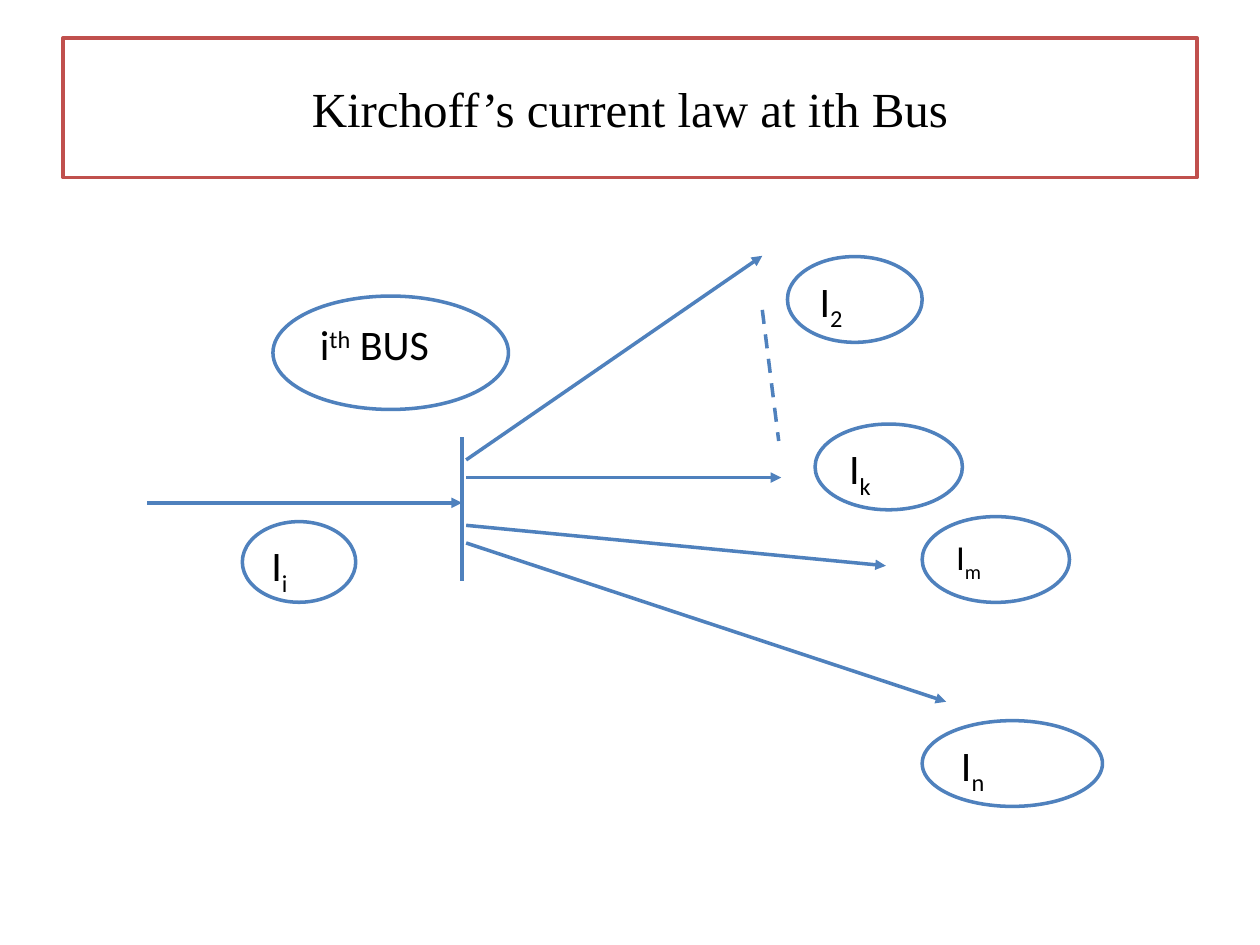
from pptx import Presentation
from pptx.dml.color import RGBColor as RGB
from pptx.enum.dml import MSO_LINE_DASH_STYLE as DASH
from pptx.enum.shapes import MSO_CONNECTOR as CONNECTOR, MSO_SHAPE as SHAPE
from pptx.enum.text import MSO_ANCHOR as ANCHOR, PP_ALIGN as ALIGN
from pptx.oxml.ns import qn
from pptx.util import Pt
from lxml.etree import SubElement

# Content
TITLE = "Kirchoff’s current law at ith Bus"
BUS_X, BRANCH_X = 264, 266.4
ARROW, DASHED = "arrow", "dashed"
LINES = [  # x1, y1, x2, y2, style
    (BUS_X, 249.8, BUS_X, 331.9, None),
    (84.2, 287.3, BUS_X, 287.3, ARROW),
    (BRANCH_X, 310.3, 540.7, 401, ARROW),
    (BRANCH_X, 262.8, 435.6, 146.2, ARROW),
    (BRANCH_X, 272.9, 446.4, 272.9, ARROW),
    (435.6, 177.1, 445, 252, DASHED),
    (BRANCH_X, 300.2, 506.2, 323.3, ARROW),
]
SUB, SUP = -25, 30
LABELS = [  # left, top, width, height, size key, (text, baseline) runs
    (527, 295.2, 84.2, 49, "small", [("I", 0), ("m", SUB)]),
    (138.5, 298.1, 64.8, 46.1, "label", [("I", 0), ("i", SUB)]),
    (156, 169.2, 134.6, 64.8, "label", [("i", 0), ("th", SUP), (" BUS", 0)]),
    (527, 411.8, 103, 49, "label", [("I", 0), ("n", SUB)]),
    (450, 146.6, 77, 49, "label", [("I", 0), ("2", SUB)]),
    (465.8, 242.3, 84.2, 49, "label", [("I", 0), ("k", SUB)]),
]
THEME = {
    "paper": RGB(255, 255, 255), "ink": RGB(0, 0, 0),
    "frame": RGB(0xC0, 0x50, 0x4D), "wire": RGB(0x4F, 0x81, 0xBD),
    "title_font": "Times New Roman", "body_font": "Calibri",
    "title": Pt(28), "label": Pt(24), "small": Pt(20), "stroke": Pt(2),
}


def set_attrs(target, values):
    for name, value in values.items():
        setattr(target, name, value)


def style_line(line, colour):
    line.color.rgb = THEME[colour]
    line.width = THEME["stroke"]


def style_box(s, colour):
    s.fill.solid()
    s.fill.fore_color.rgb = THEME["paper"]
    style_line(s.line, colour)


def add_run(p, text, font, size, baseline=0):
    r = p.add_run()
    r.text = text
    set_attrs(r.font, {"name": THEME[font], "size": THEME[size]})
    r.font.color.rgb = THEME["ink"]
    if baseline:
        r.font._element.set("baseline", str(baseline * 1000))


def add_wire(shapes, x1, y1, x2, y2, style):
    s = shapes.add_connector(CONNECTOR.STRAIGHT, Pt(x1), Pt(y1), Pt(x2), Pt(y2))
    style_line(s.line, "wire")
    if style == DASHED:
        s.line.dash_style = DASH.DASH
    if style == ARROW:
        SubElement(s.line._get_or_add_ln(), qn("a:tailEnd"), type="triangle")
    SubElement(s._element.spPr, qn("a:effectLst"))


def add_label(shapes, left, top, width, height, size, runs):
    s = shapes.add_shape(SHAPE.OVAL, Pt(left), Pt(top), Pt(width), Pt(height))
    s.shadow.inherit = False
    style_box(s, "wire")
    set_attrs(s.text_frame, {"word_wrap": True, "vertical_anchor": ANCHOR.TOP})
    p = s.text_frame.paragraphs[0]
    set_attrs(p, {"alignment": ALIGN.LEFT, "space_after": Pt(10)})
    for text, baseline in runs:
        add_run(p, text, "body_font", size, baseline)


def main():
    prs = Presentation()
    set_attrs(prs, {"slide_width": Pt(720), "slide_height": Pt(540)})
    slide = prs.slides.add_slide(prs.slide_layouts.get_by_name("Title Only"))

    # Framed title
    title = slide.shapes.title
    set_attrs(title, {"left": Pt(36), "top": Pt(21.6),
                      "width": Pt(648), "height": Pt(79.9)})
    style_box(title, "frame")
    title.text_frame.vertical_anchor = ANCHOR.MIDDLE
    p = title.text_frame.paragraphs[0]
    p.alignment = ALIGN.CENTER
    add_run(p, TITLE, "title_font", "title")

    # Bus diagram
    diagram = slide.shapes.add_group_shape().shapes
    for line in LINES:
        add_wire(diagram, *line)
    for label in LABELS:
        add_label(diagram, *label)

    prs.save("out.pptx")


if __name__ == "__main__":
    main()
